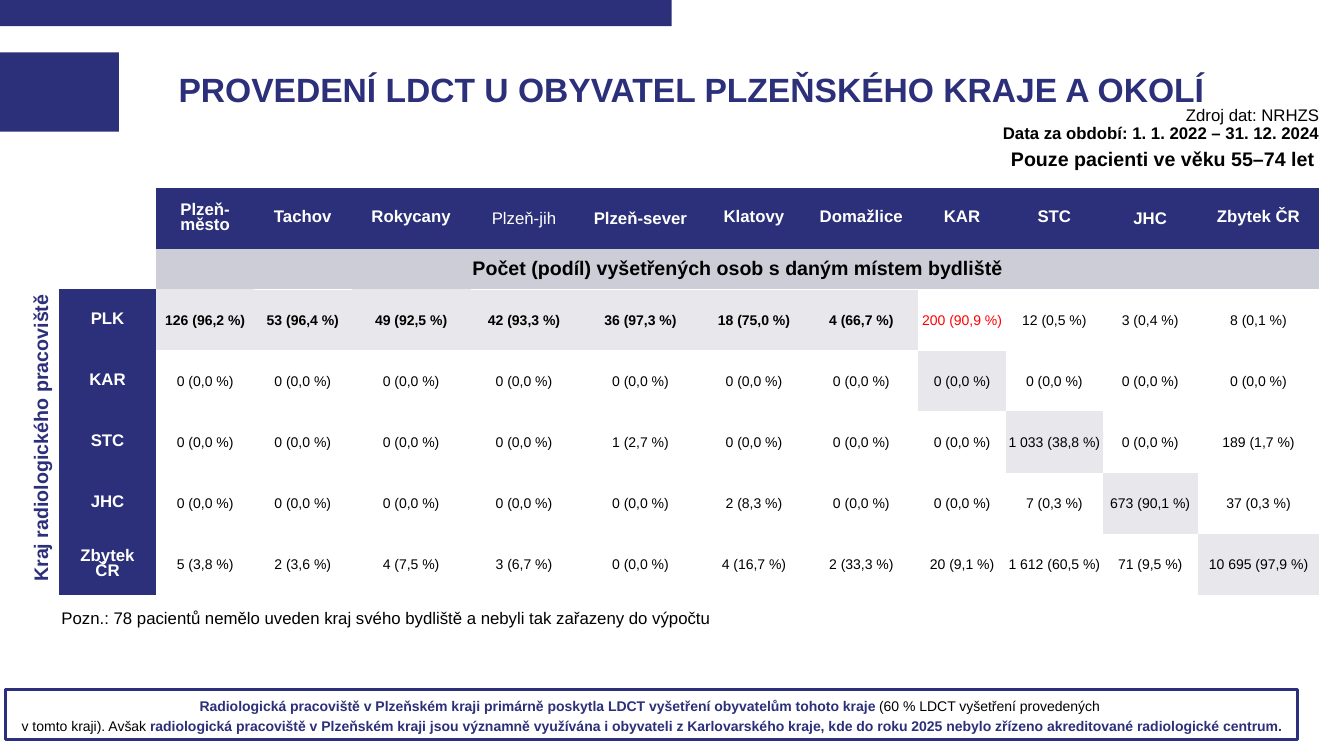
from lxml import etree
from pptx import Presentation
from pptx.dml.color import RGBColor
from pptx.enum.shapes import MSO_SHAPE
from pptx.enum.text import MSO_ANCHOR, PP_ALIGN
from pptx.oxml import parse_xml
from pptx.oxml.ns import nsdecls, qn
from pptx.util import Cm, Pt

NAVY = RGBColor(0x2C, 0x2F, 0x79)
BLACK = RGBColor(0, 0, 0)
WHITE = RGBColor(0xFF, 0xFF, 0xFF)
RED = RGBColor(0xFF, 0, 0)
BANNER_GREY = RGBColor(0xCD, 0xCD, 0xD7)
CELL_GREY = RGBColor(0xE8, 0xE8, 0xEC)
LEFT, CENTER, RIGHT = PP_ALIGN.LEFT, PP_ALIGN.CENTER, PP_ALIGN.RIGHT
TOP, MIDDLE = MSO_ANCHOR.TOP, MSO_ANCHOR.MIDDLE
NO_STYLE = "{2D5ABB26-0587-4C30-8999-92F81FD0307C}"


def write(tf, *runs, size=12, align=LEFT, anchor=TOP, spacing=1.0):
    """Fill a text frame with one paragraph of (text, colour, bold) runs."""
    tf.word_wrap = True
    tf.vertical_anchor = anchor
    p = tf.paragraphs[0]
    p.alignment = align
    p.line_spacing = spacing
    for text, color, bold in runs:
        for i, line in enumerate(text.split("\n")):
            if i:
                p.add_line_break()
            r = p.add_run()
            r.text = line
            r.font.name = "Arial"
            r.font.size = Pt(size)
            r.font.bold = bold
            r.font.color.rgb = color


def add_box(left, top, width, height, fill=None, line=None):
    sp = slide.shapes.add_shape(MSO_SHAPE.RECTANGLE, Cm(left), Cm(top), Cm(width), Cm(height))
    sp.shadow.inherit = False
    if fill is None:
        sp.fill.background()
    else:
        sp.fill.solid()
        sp.fill.fore_color.rgb = fill
    if line is None:
        sp.line.fill.background()
    else:
        sp.line.color.rgb = line
        sp.line.width = Pt(2.25)
    return sp


prs = Presentation()
prs.slide_width, prs.slide_height = Cm(33.87), Cm(19.05)
slide = prs.slides.add_slide(prs.slide_layouts[6])

# Header bars and title
add_box(0, 0, 16.93, 0.66, fill=NAVY)
add_box(0, 1.32, 3, 2, fill=NAVY)
title = slide.shapes.add_textbox(Cm(4.5), Cm(1.32), Cm(28.98), Cm(2))
title.text_frame.margin_left = 0
write(title.text_frame, ("PROVEDENÍ LDCT U OBYVATEL PLZEŇSKÉHO KRAJE A OKOLÍ", NAVY, True),
      size=24, anchor=MIDDLE, spacing=0.9)

# Notes around the table
note = slide.shapes.add_textbox(Cm(1.3), Cm(15.24), Cm(20.65), Cm(0.71))
write(note.text_frame,
      ("Pozn.: 78 pacientů nemělo uveden kraj svého bydliště a nebyli tak zařazeny do výpočtu",
       BLACK, False), spacing=0.9)

side_label = slide.shapes.add_textbox(Cm(-2.97), Cm(10.49), Cm(8.05), Cm(0.79))
side_label.rotation = 270
write(side_label.text_frame, ("Kraj radiologického pracoviště", NAVY, True), size=14, spacing=0.9)

age_group = slide.shapes.add_textbox(Cm(25.1), Cm(3.4), Cm(8.28), Cm(1.19))
write(age_group.text_frame, ("Pouze pacienti ve věku 55–74 let", BLACK, True),
      size=14, align=RIGHT, anchor=MIDDLE)

source = slide.shapes.add_textbox(Cm(24.43), Cm(2.13), Cm(9.07), Cm(2.01))
source.text_frame.margin_top = Cm(0.57)
write(source.text_frame, ("Zdroj dat: NRHZS\n", BLACK, False),
      ("Data za období: 1. 1. 2022 – 31. 12. 2024", BLACK, True), align=RIGHT, spacing=0.9)

# Conclusion
conclusion = add_box(0.15, 17.37, 32.54, 1.27, line=NAVY)
write(conclusion.text_frame,
      ("Radiologická pracoviště v Plzeňském kraji primárně poskytla LDCT vyšetření obyvatelům "
       "tohoto kraje ", NAVY, True),
      ("(60 % LDCT vyšetření provedených \nv tomto kraji). Avšak ", BLACK, False),
      ("radiologická pracoviště v Plzeňském kraji jsou významně využívána i obyvateli "
       "z Karlovarského kraje, kde do roku 2025 nebylo zřízeno akreditované radiologické centrum.",
       NAVY, True),
      size=10, align=CENTER, anchor=MIDDLE, spacing=1.2)

# Table
residences = ["Plzeň-město", "Tachov", "Rokycany", "Plzeň-jih", "Plzeň-sever", "Klatovy",
              "Domažlice", "KAR", "STC", "JHC", "Zbytek ČR"]
ZERO = "0 (0,0 %)"
workplaces = {
    "PLK": ["126 (96,2 %)", "53 (96,4 %)", "49 (92,5 %)", "42 (93,3 %)", "36 (97,3 %)",
            "18 (75,0 %)", "4 (66,7 %)", "200 (90,9 %)", "12 (0,5 %)", "3 (0,4 %)", "8 (0,1 %)"],
    "KAR": [ZERO] * 11,
    "STC": [ZERO] * 4 + ["1 (2,7 %)"] + [ZERO] * 3 + ["1 033 (38,8 %)", ZERO, "189 (1,7 %)"],
    "JHC": [ZERO] * 5 + ["2 (8,3 %)", ZERO, ZERO, "7 (0,3 %)", "673 (90,1 %)", "37 (0,3 %)"],
    "Zbytek ČR": ["5 (3,8 %)", "2 (3,6 %)", "4 (7,5 %)", "3 (6,7 %)", ZERO, "4 (16,7 %)",
                  "2 (33,3 %)", "20 (9,1 %)", "1 612 (60,5 %)", "71 (9,5 %)", "10 695 (97,9 %)"],
}
col_widths = [2.46, 2.46, 2.46, 3, 2.69, 3.18, 2.54, 2.87, 2.21, 2.44, 2.39, 3.07]
row_heights = [1.54, 0.86] + [1.54] * 5
PLZEN_DISTRICTS = 7

frame = slide.shapes.add_table(len(row_heights), len(col_widths), Cm(1.48), Cm(4.73),
                               Cm(sum(col_widths)), Cm(sum(row_heights)))
table = frame.table
table.first_row = table.horz_banding = False
frame._element.find(".//" + qn("a:tableStyleId")).text = NO_STYLE
for col, width in zip(table.columns, col_widths):
    col.width = Cm(width)
for row, height in zip(table.rows, row_heights):
    row.height = Cm(height)

# Each entry: row, column, text, colour, bold, size, line spacing, fill
entries = [(0, 0, "", WHITE, False, 12, 1.0, WHITE),
           (1, 1, "Počet (podíl) vyšetřených osob s daným místem bydliště", BLACK, True, 14, 1.0,
            BANNER_GREY)]
for c, name in enumerate(residences, 1):
    spacing = 1.0 if name in ("Plzeň-jih", "Plzeň-sever", "JHC") else 0.8
    entries.append((0, c, name, WHITE, name != "Plzeň-jih", 12, spacing, NAVY))
for r, (name, values) in enumerate(workplaces.items(), 2):
    entries.append((r, 0, name, WHITE, True, 12, 0.8, NAVY))
    for c, value in enumerate(values, 1):
        in_plzen = r == 2 and c <= PLZEN_DISTRICTS
        own_region = r > 2 and c == r + 5
        color = RED if value == "200 (90,9 %)" else BLACK
        entries.append((r, c, value, color, in_plzen, 10, 1.0,
                        CELL_GREY if in_plzen or own_region else None))

table.cell(0, 0).merge(table.cell(1, 0))
table.cell(1, 1).merge(table.cell(1, 11))
for r, c, text, color, bold, size, spacing, fill in entries:
    cell = table.cell(r, c)
    if text:
        write(cell.text_frame, (text, color, bold), size=size, align=CENTER, spacing=spacing)
    cell.vertical_anchor = MIDDLE
    if r >= 2 and c >= 1:
        cell.margin_left = cell.margin_right = cell.margin_top = Cm(0.03)
        cell.margin_bottom = 0
    if fill is None:
        cell.fill.background()
    else:
        cell.fill.solid()
        cell.fill.fore_color.rgb = fill

# White rule under the banner
for c in [2, *range(4, 11)]:
    border = parse_xml(f'<a:lnT {nsdecls("a")} w="12700"/>')
    solid = etree.SubElement(border, qn("a:solidFill"))
    etree.SubElement(solid, qn("a:srgbClr"), val=str(WHITE))
    table.cell(2, c)._tc.get_or_add_tcPr().insert(0, border)

prs.save("out.pptx")
